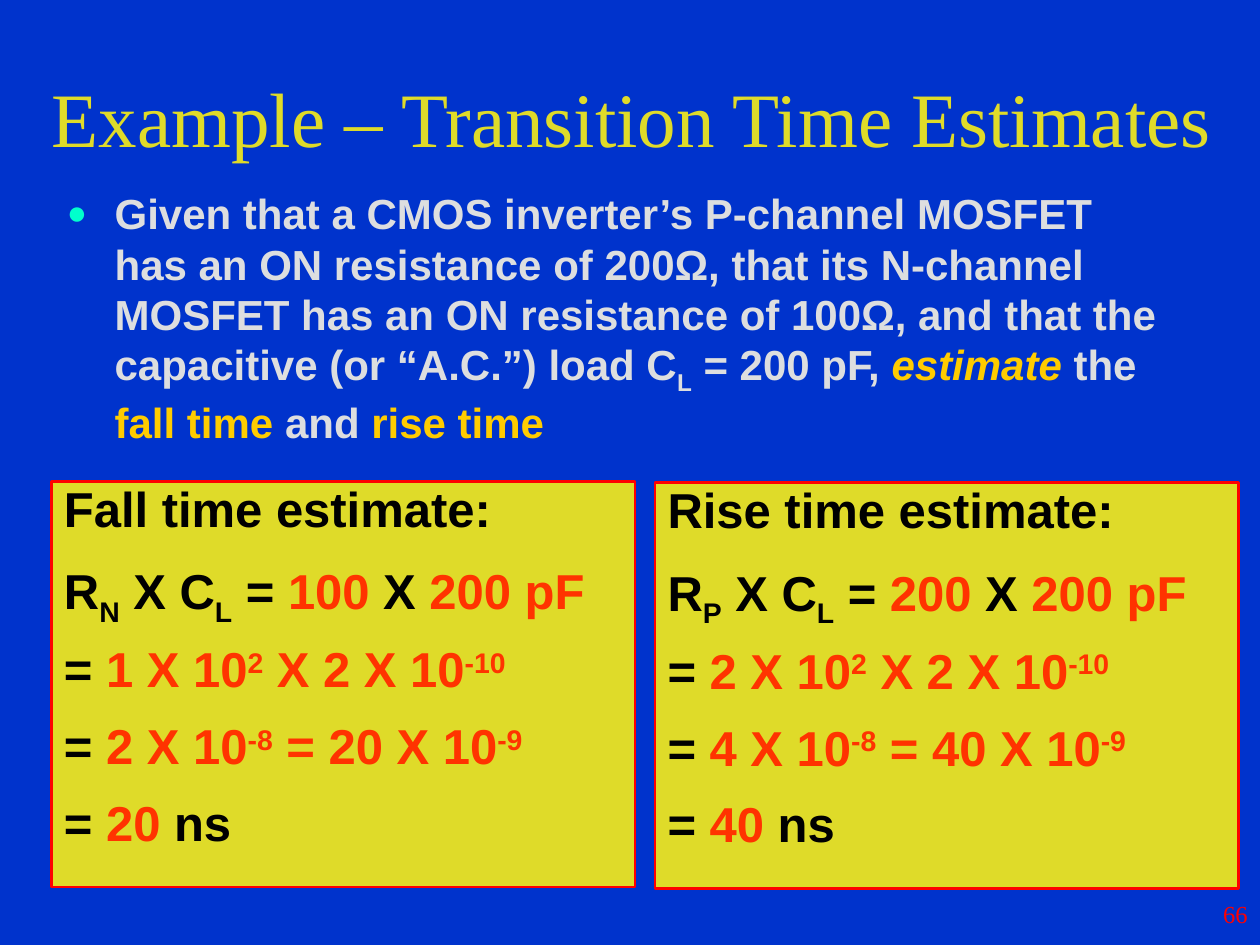
import pptx
import pptx.util
import pptx.dml.color
import pptx.enum.shapes
import pptx.enum.text
from lxml import etree

Inches, Pt = pptx.util.Inches, pptx.util.Pt
Align, Anchor = pptx.enum.text.PP_ALIGN, pptx.enum.text.MSO_ANCHOR

COLORS = {
    "background": "0033CC",
    "yellow": "DFDB29",
    "text": "DDDEDF",
    "bullet": "00FFCC",
    "highlight": "FFCC00",
    "value": "FF3300",
    "red": "FF0000",
    "black": "000000",
}
SUB, SUPER = -25, 30


def rgb(name):
    return pptx.dml.color.RGBColor.from_string(COLORS[name])


class SlideBuilder:
    """Holds the style and the current slide."""

    title_style = {"name": "Times New Roman", "size": Pt(44), "bold": False}
    body_style = {"name": "Arial", "size": Pt(24), "bold": True}
    box_style = {"name": "Arial", "size": Pt(28), "bold": True}
    number_style = {"name": "Times New Roman", "size": Pt(14)}

    def __init__(self, presentation):
        self.slide = presentation.slides.add_slide(presentation.slide_layouts[1])
        fill = self.slide.background.fill
        fill.solid()
        fill.fore_color.rgb = rgb("background")

    def place(self, shape, left, top, width, height):
        position = {"left": left, "top": top, "width": width, "height": height}
        for name, value in position.items():
            setattr(shape, name, Inches(value))

    def format_frame(self, shape, anchor):
        frame = shape.text_frame
        values = {"word_wrap": True, "vertical_anchor": anchor,
                  "auto_size": pptx.enum.text.MSO_AUTO_SIZE.NONE}
        for name, value in values.items():
            setattr(frame, name, value)
        return frame

    def add_runs(self, paragraph, runs, style, **formats):
        """Each run is (text, color) or (text, color, extras); extras may hold baseline."""
        for name, value in formats.items():
            setattr(paragraph, name, value)
        for text, color, *extras in runs:
            run = paragraph.add_run()
            run.text = text
            run.font.color.rgb = rgb(color)
            values = {**style, **(extras[0] if extras else {})}
            baseline = values.pop("baseline", None)
            for name, value in values.items():
                setattr(run.font, name, value)
            if baseline:
                run.font._element.set("baseline", str(baseline * 1000))

    def title(self, text, *position):
        shape = self.slide.shapes.title
        self.place(shape, *position)
        frame = self.format_frame(shape, Anchor.MIDDLE)
        self.add_runs(frame.paragraphs[0], [(text, "yellow")], self.title_style,
                      alignment=Align.LEFT)

    def body(self, runs, *position):
        shape = self.slide.placeholders[1]
        self.place(shape, *position)
        paragraph = self.format_frame(shape, Anchor.TOP).paragraphs[0]
        self.add_runs(paragraph, runs, self.body_style, space_before=Pt(5))
        self.bullet(paragraph)

    def bullet(self, paragraph):
        properties = paragraph._p.get_or_add_pPr()
        indent = Inches(0.38)
        properties.set("marL", str(indent))
        properties.set("indent", str(-indent))
        namespace = properties.nsmap["a"]

        def add(parent, tag, **attributes):
            return etree.SubElement(parent, f"{{{namespace}}}{tag}", **attributes)

        add(add(properties, "buClr"), "srgbClr", val=COLORS["bullet"])
        add(properties, "buSzPct", val="80000")
        add(properties, "buFont", typeface="Arial")
        add(properties, "buChar", char="●")

    def box(self, lines, *position):
        shape = self.slide.shapes.add_shape(
            pptx.enum.shapes.MSO_SHAPE.RECTANGLE, *map(Inches, position))
        shape.shadow.inherit = False
        shape.fill.solid()
        shape.fill.fore_color.rgb = rgb("yellow")
        shape.line.color.rgb = rgb("red")
        shape.line.width = Pt(1.5)
        frame = self.format_frame(shape, Anchor.TOP)
        for index, runs in enumerate(lines):
            paragraph = frame.add_paragraph() if index else frame.paragraphs[0]
            self.add_runs(paragraph, runs, self.box_style, alignment=Align.LEFT,
                          line_spacing=0.85, space_before=Pt(15.3))

    def number(self, text, *position):
        shape = self.slide.shapes.add_textbox(*map(Inches, position))
        frame = self.format_frame(shape, Anchor.MIDDLE)
        self.add_runs(frame.paragraphs[0], [(text, "red")], self.number_style,
                      alignment=Align.RIGHT)


def estimate_lines(edge, channel, digit):
    """Time estimate for a resistance of digit x 100 ohms and a 200 pF load."""
    sub, power = {"baseline": SUB}, {"baseline": SUPER}
    equals = ("= ", "black")
    return [
        [(f"{edge} time estimate:", "black")],
        [("R", "black"), (channel, "black", sub), (" X C", "black"),
         ("L", "black", sub), (" = ", "black"), (f"{digit}00", "value"),
         (" X ", "black"), ("200 pF", "value")],
        [equals, (f"{digit} X 10", "value"), ("2", "value", power),
         (" X 2 X 10", "value"), ("-10", "value", power)],
        [equals, (f"{digit * 2} X 10", "value"), ("-8", "value", power),
         (f" = {digit * 2}0 X 10", "value"), ("-9", "value", power)],
        [equals, (f"{digit * 2}0", "value"), (" ns", "black")],
    ]


def main():
    presentation = pptx.Presentation()
    presentation.slide_width = Inches(10)
    presentation.slide_height = Inches(7.5)

    builder = SlideBuilder(presentation)
    builder.title(" Example – Transition Time Estimates", 0.16, 0.3, 9.84, 1.25)
    builder.body([
        ("Given that a CMOS inverter’s P-channel MOSFET has an ON resistance of "
         "200Ω, that its N-channel MOSFET has an ON resistance of 100Ω, and that "
         "the capacitive (or “A.C.”) load C", "text"),
        ("L", "text", {"baseline": SUB}),
        (" = 200 pF, ", "text"),
        ("estimate", "highlight", {"italic": True}),
        (" the ", "text"),
        ("fall time ", "highlight"),
        ("and", "text"),
        (" rise time", "highlight"),
    ], 0.43, 1.44, 8.87, 5.33)
    builder.box(estimate_lines("Fall", "N", 1), 0.41, 3.82, 4.63, 3.22)
    builder.box(estimate_lines("Rise", "P", 2), 5.2, 3.83, 4.63, 3.22)
    builder.number("66", 7.92, 7, 2.08, 0.5)
    presentation.save("out.pptx")


if __name__ == "__main__":
    main()
